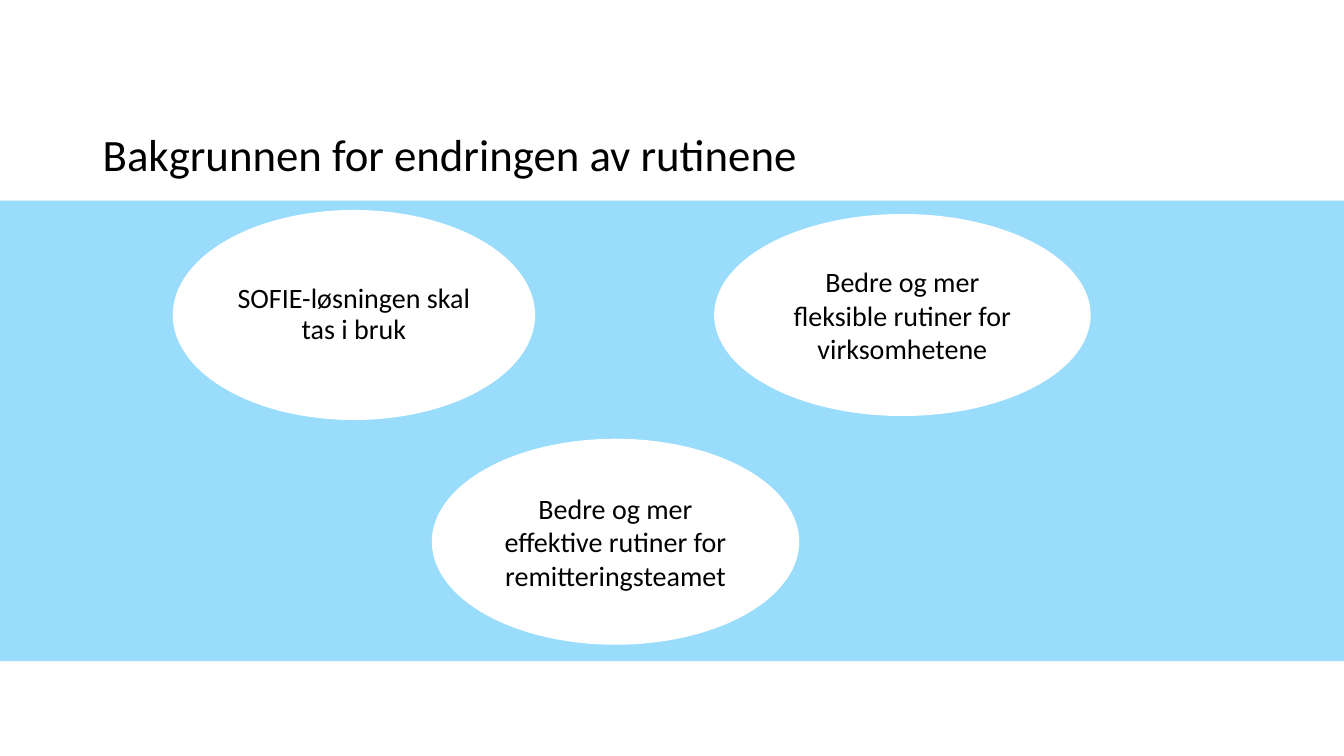
from pptx import Presentation
from pptx.dml.color import RGBColor
from pptx.enum import shapes, text
from pptx.util import Inches, Pt

BLACK = RGBColor(0x00, 0x00, 0x00)
WHITE = RGBColor(0xFF, 0xFF, 0xFF)
SKY = RGBColor(0x9A, 0xDC, 0xFB)
FONT = "Calibri"

WIDTH, HEIGHT = 13.33, 7.5
REASONS = [
    ((1.72, 2.09, 3.58, 2.07), "SOFIE-løsningen skal tas i bruk", 0.9),
    ((4.29, 4.36, 3.63, 2.03),
     "Bedre og mer effektive rutiner for remitteringsteamet", None),
    ((7.09, 2.13, 3.72, 1.99),
     "Bedre og mer fleksible rutiner for virksomhetene", None),
]


def write(frame, words, size, anchor, align, spacing):
    frame.word_wrap = True
    frame.vertical_anchor = anchor
    para = frame.paragraphs[0]
    para.alignment = align
    para.line_spacing = spacing
    run = para.add_run()
    run.text = words
    for name, value in {"name": FONT, "size": Pt(size)}.items():
        setattr(run.font, name, value)
    run.font.color.rgb = BLACK


def add_form(slide, kind, box, fill):
    form = slide.shapes.add_shape(kind, *map(Inches, box))
    form.shadow.inherit = False
    form.fill.solid()
    form.fill.fore_color.rgb = fill
    return form


def add_band(slide, box):
    band = add_form(slide, shapes.MSO_SHAPE.RECTANGLE, box, SKY)
    band.line.fill.background()


def add_title(slide, box, words):
    title = slide.shapes.add_textbox(*map(Inches, box))
    write(title.text_frame, words, 32, text.MSO_ANCHOR.BOTTOM,
          text.PP_ALIGN.LEFT, 0.9)


def add_reason(slide, box, words, spacing):
    oval = add_form(slide, shapes.MSO_SHAPE.OVAL, box, WHITE)
    oval.line.color.rgb = WHITE
    oval.line.width = Pt(1)
    write(oval.text_frame, words, 20, text.MSO_ANCHOR.MIDDLE,
          text.PP_ALIGN.CENTER, spacing)


def main():
    deck = Presentation()
    deck.slide_width, deck.slide_height = Inches(WIDTH), Inches(HEIGHT)
    slide = deck.slides.add_slide(deck.slide_layouts[6])
    add_band(slide, (0, 1.99, WIDTH, 4.57))
    add_title(slide, (0.92, 0.4, 10.71, 1.45),
              "Bakgrunnen for endringen av rutinene")
    for box, words, spacing in REASONS:
        add_reason(slide, box, words, spacing)
    deck.save("out.pptx")


if __name__ == "__main__":
    main()
